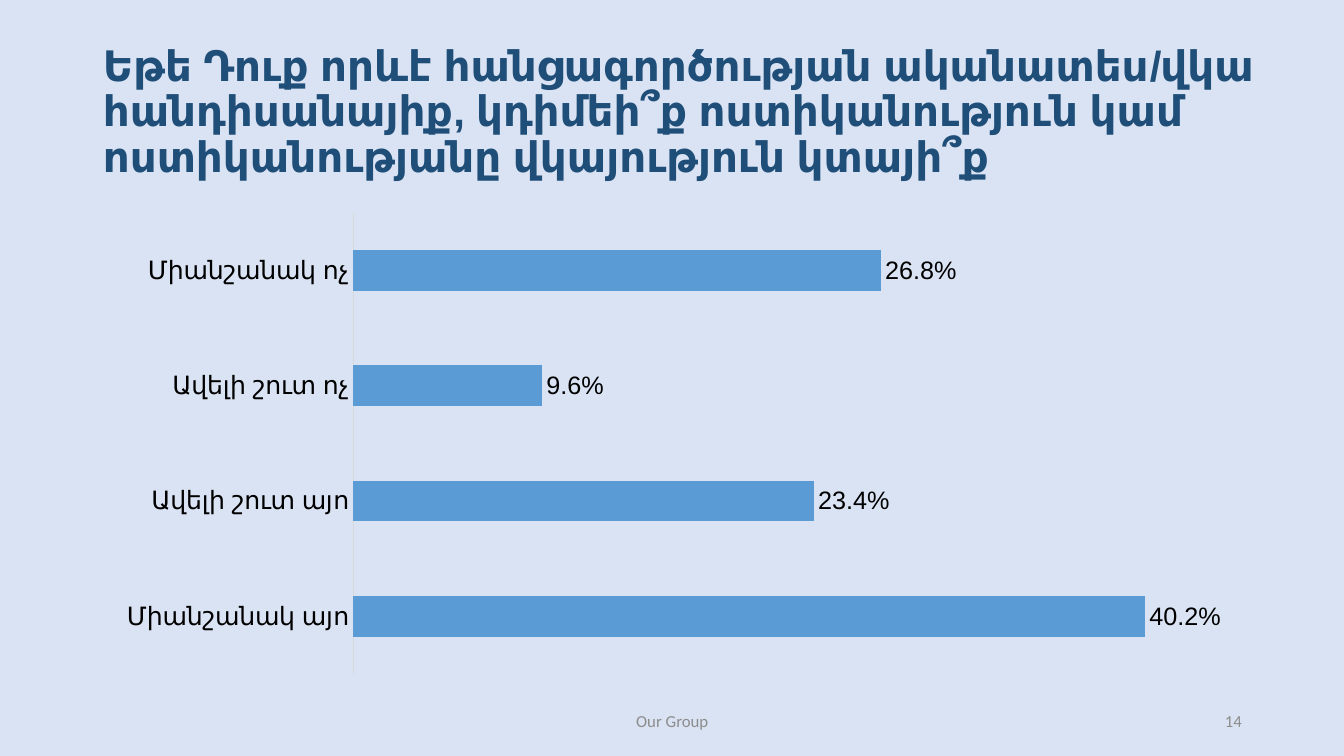
"""Build the survey slide on reporting a witnessed crime to the police."""
from dataclasses import dataclass

from lxml.etree import SubElement
from pptx import Presentation
from pptx.chart.data import CategoryChartData
from pptx.dml.color import RGBColor
from pptx.enum.chart import XL_CHART_TYPE, XL_LABEL_POSITION, XL_TICK_MARK
from pptx.enum.text import MSO_ANCHOR, MSO_AUTO_SIZE, PP_ALIGN
from pptx.oxml.ns import qn
from pptx.util import Pt


@dataclass(frozen=True)
class Theme:
    background: RGBColor = RGBColor(0xDA, 0xE3, 0xF3)
    title: RGBColor = RGBColor(0x1F, 0x4E, 0x79)
    bar: RGBColor = RGBColor(0x5B, 0x9B, 0xD5)
    axis: RGBColor = RGBColor(0xD9, 0xD9, 0xD9)
    label: RGBColor = RGBColor(0, 0, 0)
    footer: RGBColor = RGBColor(0x8C, 0x8C, 0x8C)
    font: str = "Arial"
    footer_font: str = "Calibri"
    title_size: Pt = Pt(30)
    label_size: Pt = Pt(18)
    footer_size: Pt = Pt(12)


theme = Theme()


def style_font(font, name, size, color):
    font.name = name
    font.size = size
    font.color.rgb = color


presentation = Presentation()
presentation.slide_width = Pt(960)
presentation.slide_height = Pt(540)
slide = presentation.slides.add_slide(presentation.slide_layouts[5])
slide.background.fill.solid()
slide.background.fill.fore_color.rgb = theme.background

title = slide.shapes.title
title.left, title.top, title.width, title.height = Pt(66.24), Pt(28.8), Pt(882), Pt(104.4)
title.text_frame.word_wrap = True
title.text_frame.auto_size = MSO_AUTO_SIZE.NONE
title.text_frame.vertical_anchor = MSO_ANCHOR.MIDDLE
paragraph = title.text_frame.paragraphs[0]
paragraph.alignment = PP_ALIGN.LEFT
paragraph.line_spacing = 0.9
run = paragraph.add_run()
run.text = (
    "Եթե Դուք որևէ հանցագործության ականատես/վկա հանդիսանայիք, "
    "կդիմեի՞ք ոստիկանություն կամ ոստիկանությանը վկայություն կտայի՞ք"
)
style_font(run.font, theme.font, theme.title_size, theme.title)
run.font.bold = True

answers = {
    "Միանշանակ այո": 40.2,
    "Ավելի շուտ այո": 23.4,
    "Ավելի շուտ ոչ": 9.6,
    "Միանշանակ ոչ": 26.8,
}
chart_data = CategoryChartData(number_format='0.0"%"')
chart_data.categories = list(answers)
chart_data.add_series("Series 1", list(answers.values()))
chart = slide.shapes.add_chart(
    XL_CHART_TYPE.BAR_CLUSTERED, Pt(73.44), Pt(145.44), Pt(828), Pt(342.72), chart_data
).chart
style_font(chart.font, theme.font, theme.label_size, theme.label)
chart.has_legend = False
chart.has_title = False

category_axis = chart.category_axis
category_axis.major_tick_mark = XL_TICK_MARK.NONE
category_axis.minor_tick_mark = XL_TICK_MARK.NONE
category_axis.format.line.color.rgb = theme.axis
category_axis.format.line.width = Pt(0.75)
style_font(category_axis.tick_labels.font, theme.font, theme.label_size, theme.label)

value_axis = chart.value_axis
value_axis.visible = False
value_axis.has_major_gridlines = False
value_axis.minimum_scale = 0
value_axis.maximum_scale = 45

plot = chart.plots[0]
plot.gap_width = 182
plot.vary_by_categories = False
bars = plot.series[0]
bars.format.fill.solid()
bars.format.fill.fore_color.rgb = theme.bar
labels = bars.data_labels
labels.show_value = True
labels.number_format = '0.0"%"'
labels.number_format_is_linked = False
labels.position = XL_LABEL_POSITION.OUTSIDE_END
style_font(labels.font, theme.font, theme.label_size, theme.label)

plot_area = chart.element.find(".//" + qn("c:plotArea"))
layout = plot_area.find(qn("c:layout"))
if layout is None:
    layout = SubElement(plot_area, qn("c:layout"))
    plot_area.insert(0, layout)
manual_layout = SubElement(layout, qn("c:manualLayout"))
for tag, value in (
    ("layoutTarget", "inner"), ("xMode", "edge"), ("yMode", "edge"),
    ("x", "0.216"), ("y", "0.02"), ("w", "0.765"), ("h", "0.96"),
):
    SubElement(manual_layout, qn(f"c:{tag}")).set("val", value)

for text, left, width, alignment in (
    ("Our Group", Pt(318.24), Pt(324), PP_ALIGN.CENTER),
    ("14", Pt(678.24), Pt(216), PP_ALIGN.RIGHT),
):
    footer = slide.shapes.add_textbox(left, Pt(500.4), width, Pt(28.8))
    footer.text_frame.word_wrap = True
    footer.text_frame.vertical_anchor = MSO_ANCHOR.MIDDLE
    paragraph = footer.text_frame.paragraphs[0]
    paragraph.alignment = alignment
    run = paragraph.add_run()
    run.text = text
    style_font(run.font, theme.footer_font, theme.footer_size, theme.footer)

presentation.save("out.pptx")
